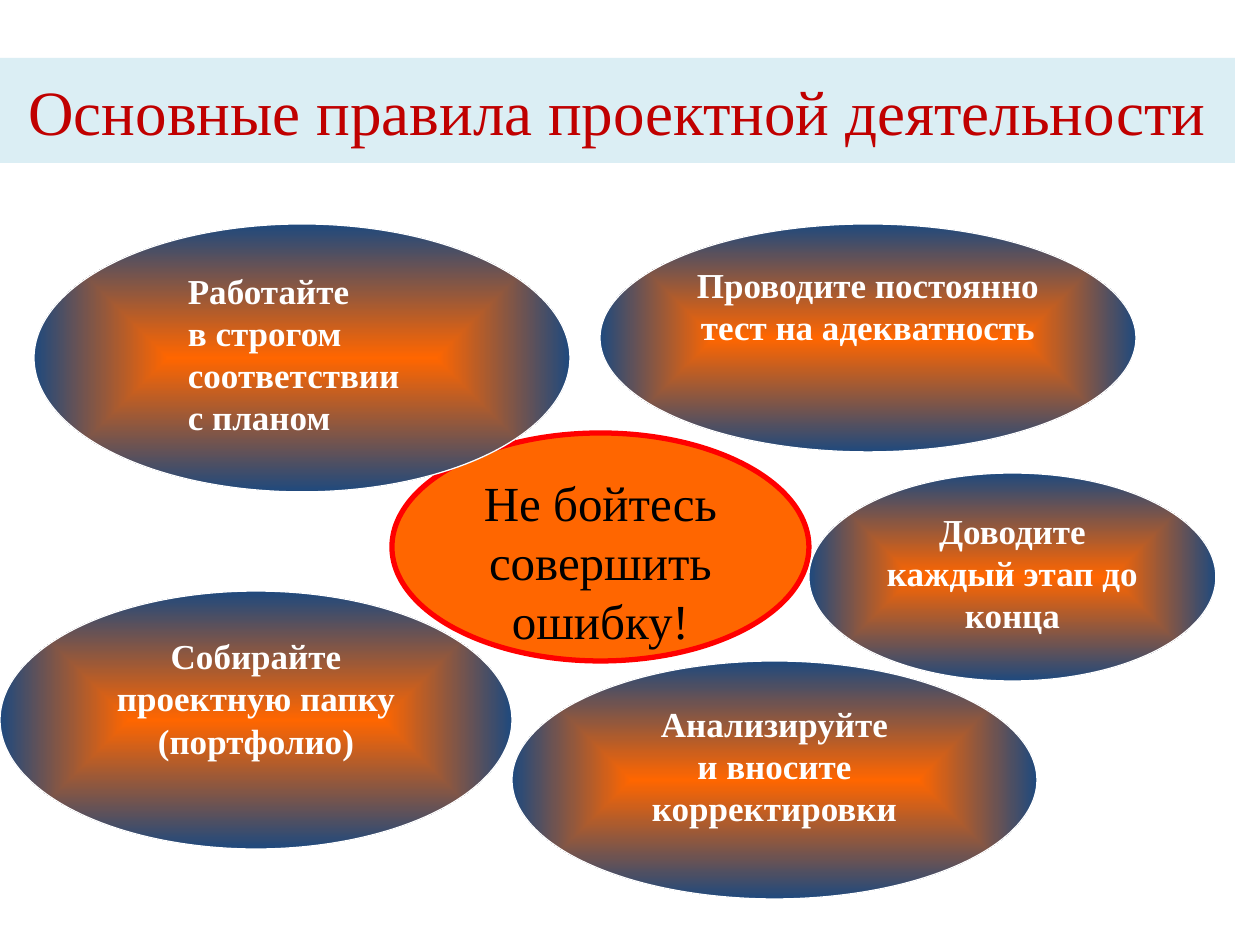
from dataclasses import dataclass

from lxml import etree
from pptx import Presentation
from pptx.dml.color import RGBColor
from pptx.enum.shapes import MSO_SHAPE
from pptx.enum.text import MSO_ANCHOR, MSO_AUTO_SIZE, PP_ALIGN
from pptx.oxml.ns import qn
from pptx.util import Emu, Pt

OVAL = MSO_SHAPE.OVAL
TOP, MIDDLE = MSO_ANCHOR.TOP, MSO_ANCHOR.MIDDLE
LEFT, CENTER = PP_ALIGN.LEFT, PP_ALIGN.CENTER
GROW = MSO_AUTO_SIZE.SHAPE_TO_FIT_TEXT
EMU_PER_PX = 914400 // 126
TITLE_ONLY_LAYOUT = 5


@dataclass(frozen=True)
class Theme:
    font: str = "Times New Roman"
    title_size: int = 36
    center_size: int = 28
    rule_size: int = 20
    title: str = "C00000"
    title_band: str = "DBEEF4"
    orange: str = "FF6600"
    navy: str = "1F497D"
    red: str = "FF0000"
    white: str = "FFFFFF"
    black: str = "000000"


THEME = Theme()

# Boxes are left, top, width, height in px.
SLIDE_SIZE = (1260, 945)
TITLE = ("Основные правила проектной деятельности", (0, 66, 1235, 89))
CENTER_RULE = ("Не бойтесь совершить ошибку!", (392, 433, 417, 228))
RULE_INDENT = 63
RULES = [
    (["Работайте", "в строгом соответствии", "с планом"], (34, 224, 536, 268), LEFT),
    (["Проводите постоянно тест на адекватность"], (600, 224, 536, 228), CENTER),
    (["Доводите каждый этап до конца"], (809, 473, 407, 208), CENTER),
    (["Собирайте проектную папку (портфолио)"], (0, 591, 512, 258), CENTER),
    (["Анализируйте", "и вносите корректировки"], (512, 661, 525, 238), CENTER),
]


def px(value):
    return Emu(value * EMU_PER_PX)


def color(code):
    return RGBColor.from_string(code)


def write(shape, lines, size, text_color, bold=False, align=CENTER, anchor=TOP):
    frame = shape.text_frame
    frame.word_wrap = True
    frame.vertical_anchor = anchor
    for index, line in enumerate(lines):
        paragraph = frame.add_paragraph() if index else frame.paragraphs[0]
        paragraph.alignment = align
        if align == LEFT:
            properties = paragraph._p.get_or_add_pPr()
            properties.set("marL", str(px(RULE_INDENT)))
            properties.set("indent", "0")
        run = paragraph.add_run()
        run.text = line
        run.font.name = THEME.font
        run.font.size = Pt(size)
        run.font.bold = bold
        run.font.color.rgb = color(text_color)


def fill_from_center(shape, inner, outer):
    """Fill with a gradient that runs from the middle to the outline."""
    shape.fill.gradient()
    for stop, code in zip(shape.fill.gradient_stops, (inner, outer)):
        stop.color.rgb = color(code)
    gradient = shape._element.spPr.find(qn("a:gradFill"))
    gradient.remove(gradient.find(qn("a:lin")))
    path = etree.SubElement(gradient, qn("a:path"), {"path": "shape"})
    sides = {side: "50000" for side in "ltrb"}
    etree.SubElement(path, qn("a:fillToRect"), sides)


def add_oval(slide, box, line_color, line_width):
    oval = slide.shapes.add_shape(OVAL, *map(px, box))
    oval.shadow.inherit = False
    oval.line.color.rgb = color(line_color)
    oval.line.width = Pt(line_width)
    return oval


def add_title(slide):
    text, box = TITLE
    title = slide.shapes.title
    title.left, title.top, title.width, title.height = map(px, box)
    title.fill.solid()
    title.fill.fore_color.rgb = color(THEME.title_band)
    write(title, [text], THEME.title_size, THEME.title, anchor=MIDDLE)
    title.text_frame.auto_size = GROW


def add_center_rule(slide):
    text, box = CENTER_RULE
    oval = add_oval(slide, box, THEME.red, 3)
    oval.fill.solid()
    oval.fill.fore_color.rgb = color(THEME.orange)
    write(oval, [text], THEME.center_size, THEME.black)


def add_rules(slide):
    for lines, box, align in RULES:
        oval = add_oval(slide, box, THEME.white, 0.75)
        fill_from_center(oval, THEME.orange, THEME.navy)
        write(oval, lines, THEME.rule_size, THEME.white, bold=True, align=align)


def main():
    presentation = Presentation()
    presentation.slide_width, presentation.slide_height = map(px, SLIDE_SIZE)
    layout = presentation.slide_layouts[TITLE_ONLY_LAYOUT]
    slide = presentation.slides.add_slide(layout)
    add_title(slide)
    add_center_rule(slide)
    add_rules(slide)
    presentation.save("out.pptx")


if __name__ == "__main__":
    main()
